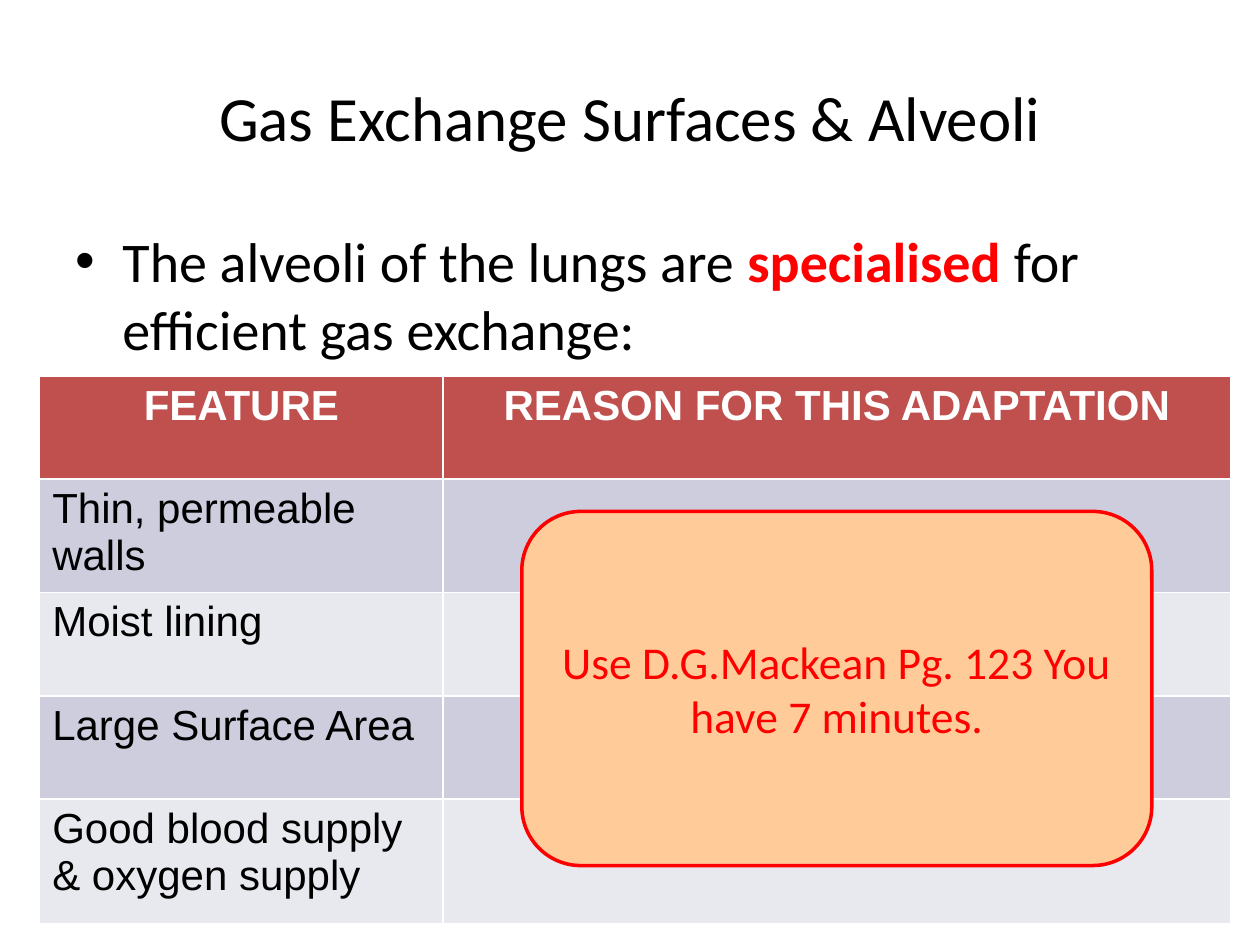
from lxml import etree
from pptx import Presentation
from pptx.dml.color import RGBColor
from pptx.enum.shapes import MSO_SHAPE
from pptx.enum.text import MSO_ANCHOR, PP_ALIGN
from pptx.oxml.ns import qn
from pptx.util import Cm, Pt

CENTER, LEFT = PP_ALIGN.CENTER, PP_ALIGN.LEFT
MIDDLE, TOP = MSO_ANCHOR.MIDDLE, MSO_ANCHOR.TOP
ROUNDED = MSO_SHAPE.ROUNDED_RECTANGLE

COLORS = {
    "black": "000000",
    "white": "FFFFFF",
    "red": "FF0000",
    "header": "C0504D",
    "odd_row": "CDCDDE",
    "even_row": "E8E8EF",
    "note": "FFCC99",
}


class SlideBuilder:
    """Holds the text style and the current slide, and adds elements to it."""

    body_font = "Calibri"
    table_font = "Arial"

    def __init__(self, slide):
        self.slide = slide

    def color(self, name):
        return RGBColor.from_string(COLORS[name])

    def fill(self, target, name):
        target.fill.solid()
        target.fill.fore_color.rgb = self.color(name)

    def add_runs(self, para, runs, size, font, align=LEFT):
        para.alignment = align
        for text, color, bold in runs:
            span = para.add_run()
            span.text = text
            span.font.name = font
            span.font.size = Pt(size)
            span.font.bold = bold
            span.font.color.rgb = self.color(color)

    def text(self, area, runs, size, align=LEFT, anchor=TOP):
        box = self.slide.shapes.add_textbox(*map(Cm, area))
        frame = box.text_frame
        frame.word_wrap = True
        frame.vertical_anchor = anchor
        para = frame.paragraphs[0]
        self.add_runs(para, runs, size, self.body_font, align)
        return para

    def bullet(self, area, runs, size):
        para = self.text(area, runs, size)
        para.space_before = Pt(size * 0.2)
        properties = para._p.get_or_add_pPr()
        properties.set("marL", str(Cm(0.95)))
        properties.set("indent", str(Cm(-0.95)))
        etree.SubElement(properties, qn("a:buFont")).set("typeface", "Arial")
        etree.SubElement(properties, qn("a:buChar")).set("char", "•")

    def table(self, left, top, widths, heights, rows, size):
        area = map(Cm, (left, top, sum(widths), sum(heights)))
        table = self.slide.shapes.add_table(len(rows), len(widths), *area).table
        for column, width in zip(table.columns, widths):
            column.width = Cm(width)
        for index, (row, height, texts) in enumerate(zip(table.rows, heights, rows)):
            row.height = Cm(height)
            is_header = index == 0
            background = "header" if is_header else "odd_row" if index % 2 else "even_row"
            for cell, text in zip(row.cells, texts):
                self.fill(cell, background)
                if text:
                    runs = [(text, "white" if is_header else "black", is_header)]
                    align = CENTER if is_header else LEFT
                    para = cell.text_frame.paragraphs[0]
                    self.add_runs(para, runs, size, self.table_font, align)

    def note(self, area, runs, size):
        box = self.slide.shapes.add_shape(ROUNDED, *map(Cm, area))
        box.shadow.inherit = False
        self.fill(box, "note")
        box.line.color.rgb = self.color("red")
        box.line.width = Pt(2)
        frame = box.text_frame
        frame.word_wrap = True
        frame.vertical_anchor = MIDDLE
        self.add_runs(frame.paragraphs[0], runs, size, self.body_font, CENTER)


def main():
    deck = Presentation()
    deck.slide_width, deck.slide_height = Cm(25.4), Cm(19.05)
    page = SlideBuilder(deck.slides.add_slide(deck.slide_layouts[6]))

    page.text(
        (1.27, 0.76, 22.86, 3.18),
        [("Gas Exchange Surfaces & Alveoli", "black", False)],
        36, CENTER, MIDDLE,
    )
    page.bullet(
        (1.27, 4.45, 22.86, 12.57),
        [
            ("The alveoli of the lungs are ", "black", False),
            ("specialised", "red", True),
            (" for efficient gas exchange:", "black", False),
        ],
        32,
    )
    features = [
        "Thin, permeable walls",
        "Moist lining",
        "Large Surface Area",
        "Good blood supply & oxygen supply",
    ]
    page.table(
        0.8, 7.58, [8.13, 15.88], [2.08] * 4 + [2.51],
        [("FEATURE", "REASON FOR THIS ADAPTATION")] + [(name, "") for name in features],
        24,
    )
    page.note(
        (10.52, 10.31, 12.7, 7.14),
        [("Use D.G.Mackean Pg. 123 You have 7 minutes.", "red", False)],
        26,
    )
    deck.save("out.pptx")


if __name__ == "__main__":
    main()
